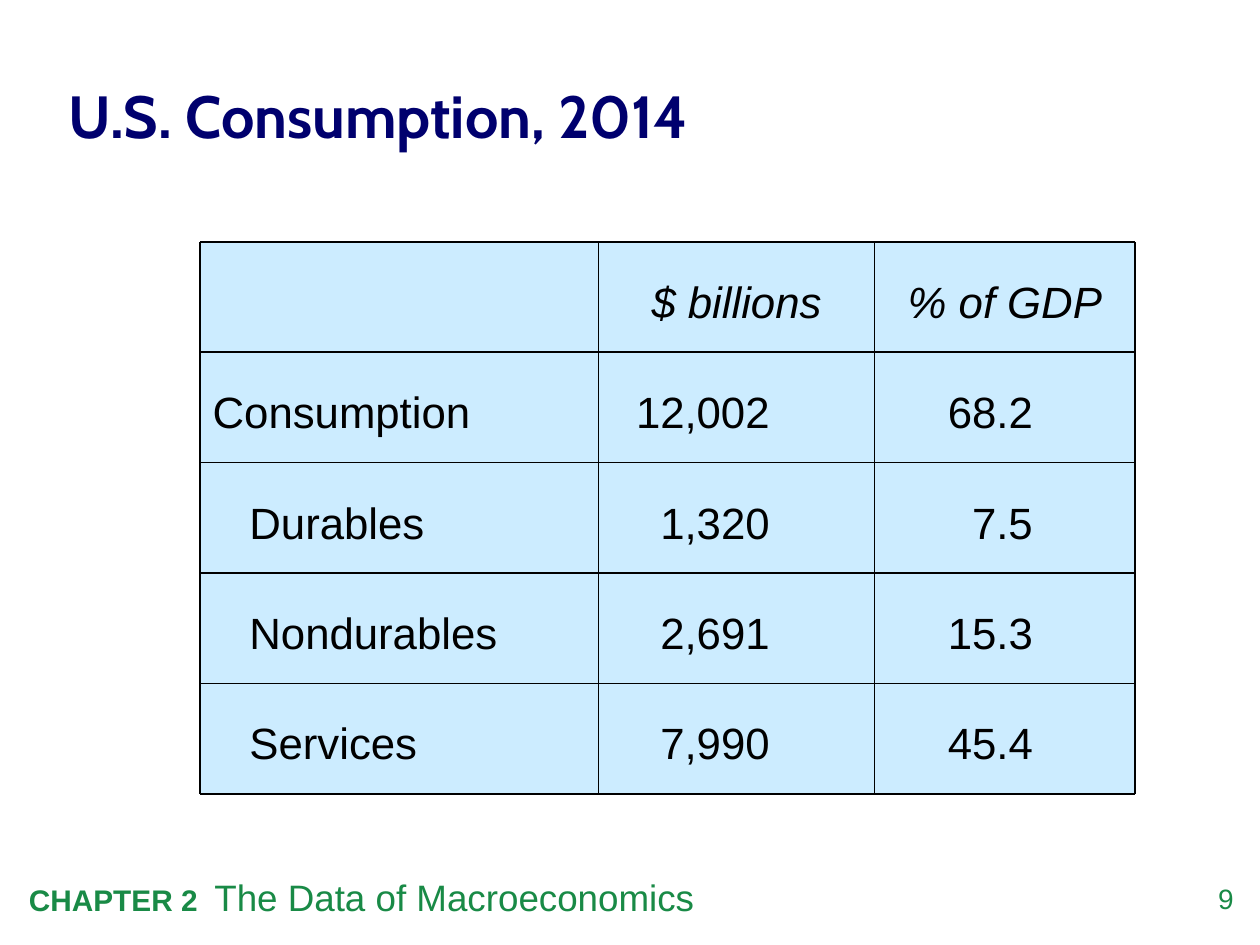
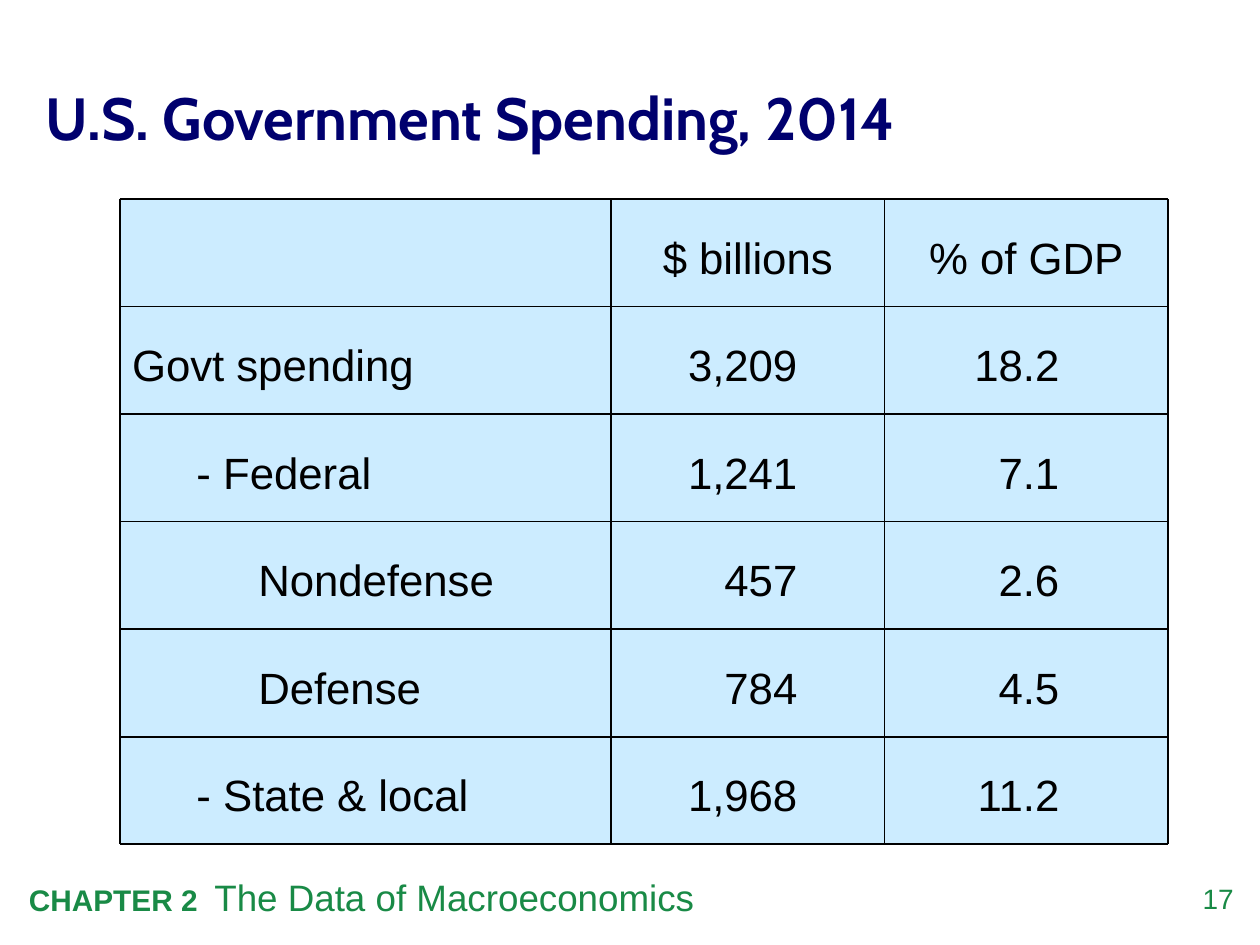
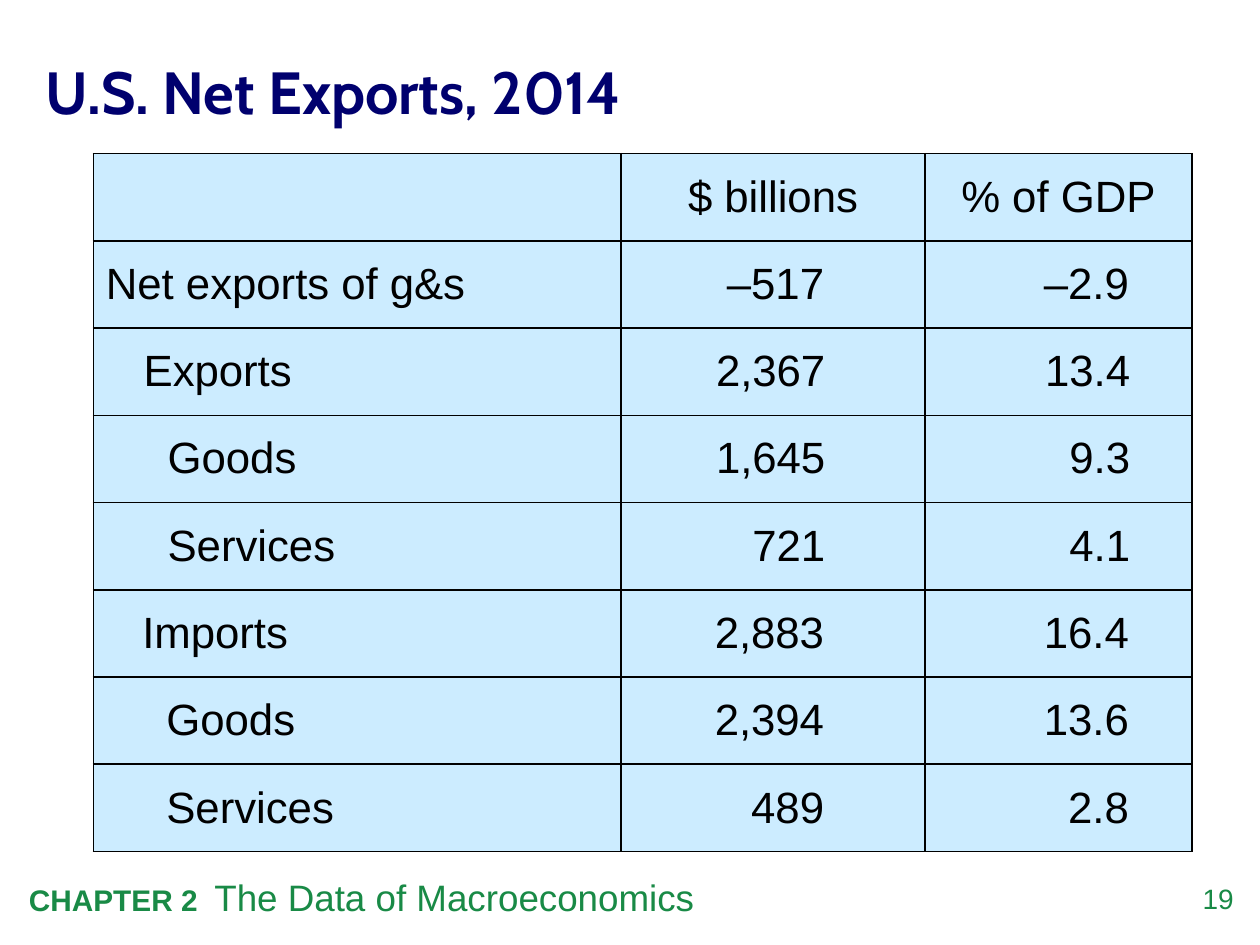
from pptx import Presentation
from pptx.dml.color import RGBColor
from pptx.enum.shapes import MSO_CONNECTOR, MSO_SHAPE
from pptx.enum.text import MSO_ANCHOR, MSO_AUTO_SIZE, PP_ALIGN
from pptx.oxml.ns import qn
from pptx.util import Inches, Pt
from lxml import etree
from itertools import accumulate

LEFT, MID, RIGHT = PP_ALIGN.LEFT, PP_ALIGN.CENTER, PP_ALIGN.RIGHT
CENTER = MSO_ANCHOR.MIDDLE
FIXED = MSO_AUTO_SIZE.NONE
RECT = MSO_SHAPE.RECTANGLE
LINE = MSO_CONNECTOR.STRAIGHT

COLORS = {"title": "00006E", "foot": "198A46", "cell": "CCECFF", "ink": "000000"}
BODY, HEAD = "Arial", "Cabin"
PAD = 0.1
HEADS = ("", "$ billions", "% of GDP")
BLANK = ("", 0, "", "")

USE = [
    ("Consumption", 0, "12,002", "68.2"),
    ("Durables", 1, "1,320", "7.5"),
    ("Nondurables", 1, "2,691", "15.3"),
    ("Services", 1, "7,990", "45.4"),
]
SPEND = [
    ("Govt spending", 0, "3,209", "18.2"),
    ("- Federal", 1, "1,241", "7.1"),
    ("Nondefense", 2, "457", "2.6"),
    ("Defense", 2, "784", "4.5"),
    ("- State & local", 1, "1,968", "11.2"),
]
NET = [("Net exports of g&s", 0, "–517", "–2.9")]
SALES = [
    ("Exports", 1, "2,367", "13.4"),
    ("Goods", 2, "1,645", "9.3"),
    ("Services", 2, "721", "4.1"),
]
BUYS = [
    ("Imports", 1, "2,883", "16.4"),
    ("Goods", 2, "2,394", "13.6"),
    ("Services", 2, "489", "2.8"),
]
WIDTHS = (4.19, 2.41, 2.12)
STEPS = (0, 0.29, 0.48)
GAPS = (0.8, 0.5)


def rgb(name):
    return RGBColor.from_string(COLORS[name])


def style(font, size, color, name=BODY, bold=False, italic=False):
    font.name, font.size = name, Pt(size)
    font.bold, font.italic = bold, italic
    font.color.rgb = rgb(color)


def strip(frame):
    frame.margin_left = frame.margin_right = 0
    frame.margin_top = frame.margin_bottom = 0


def add_title(slide, text, box):
    title = slide.shapes.title
    title.left, title.top, title.width, title.height = map(Inches, box)
    frame = title.text_frame
    frame.text = text
    frame.auto_size = FIXED
    frame.vertical_anchor = CENTER
    strip(frame)
    para = frame.paragraphs[0]
    para.alignment = LEFT
    para.line_spacing = 1.05
    style(para.font, 34, "title", HEAD, bold=True)


def add_box(slide, *box):
    frame = slide.shapes.add_textbox(*map(Inches, box)).text_frame
    frame.word_wrap = True
    return frame


def add_footer(slide, number):
    para = add_box(slide, 0.13, 6.89, 8.18, 0.45).paragraphs[0]
    for text, size, bold in (("CHAPTER 2  ", 17, True),
                             ("The Data of Macroeconomics", 21, False)):
        run = para.add_run()
        run.text = text
        style(run.font, size, "foot", bold=bold)
    frame = add_box(slide, 9.24, 7, 0.55, 0.32)
    strip(frame)
    para = frame.paragraphs[0]
    para.text = str(number)
    para.alignment = RIGHT
    style(para.font, 16, "foot")


def add_label(slide, text, box, align=LEFT, indent=0, stop=None, italic=False):
    frame = add_box(slide, *box)
    frame.vertical_anchor = CENTER
    frame.margin_left = Inches(PAD + indent)
    frame.margin_top = Inches(0.11)
    para = frame.paragraphs[0]
    para.text = text
    para.alignment = align
    if stop:
        tabs = etree.SubElement(para._p.get_or_add_pPr(), qn("a:tabLst"))
        etree.SubElement(tabs, qn("a:tab"), pos=str(Inches(stop)), algn="dec")
    style(para.font, 25, "ink", italic=italic)


def add_line(slide, *ends):
    line = slide.shapes.add_connector(LINE, *map(Inches, ends))
    line.line.color.rgb = rgb("ink")
    line.line.width = Pt(1)
    etree.SubElement(line._element.spPr, qn("a:effectLst"))
    return line


def add_sheet(slide, rows, place, widths, height, indents, stops, italic=False):
    left, top = place
    count = len(rows) + 1
    step = height / count
    edges = list(accumulate(widths, initial=left))
    right, bottom = edges[-1], top + height
    panel = slide.shapes.add_shape(
        RECT, *map(Inches, (left, top, right - left, height)))
    panel.shadow.inherit = False
    panel.fill.solid()
    panel.fill.fore_color.rgb = rgb("cell")
    panel.line.fill.background()

    for col in (1, 2):
        add_label(slide, HEADS[col], (edges[col], top, widths[col], step),
                  MID, italic=italic)
    for row, (label, level, *values) in enumerate(rows, 1):
        y = top + row * step
        add_label(slide, label, (left, y, widths[0], step), indent=indents[level])
        for col, (value, stop) in enumerate(zip(values, stops), 1):
            add_label(slide, "\t" + value, (edges[col], y, widths[col], step),
                      stop=stop)

    for row in range(count + 1):
        y = top + row * step
        line = add_line(slide, left, y, right, y)
        if row * 2 == count:
            line.begin_connect(panel, 1)
            line.end_connect(panel, 3)
    for x in edges:
        add_line(slide, x, top, x, bottom)


def add_border(cell, shown):
    props = cell._tc.get_or_add_tcPr()
    for side in ("lnL", "lnR", "lnT", "lnB"):
        line = etree.SubElement(props, qn("a:" + side), w=str(Pt(1)))
        if shown:
            fill = etree.SubElement(line, qn("a:solidFill"))
            etree.SubElement(fill, qn("a:srgbClr"), val=COLORS["ink"])
        else:
            etree.SubElement(line, qn("a:noFill"))


def fill_cell(cell, text, align, solid, left=PAD, right=PAD):
    add_border(cell, solid)
    if solid:
        cell.fill.solid()
        cell.fill.fore_color.rgb = rgb("cell")
    else:
        cell.fill.background()
    cell.vertical_anchor = CENTER
    cell.margin_left, cell.margin_right = Inches(left), Inches(right)
    para = cell.text_frame.paragraphs[0]
    if text:
        para.text = text
    para.alignment = align
    style(para.font, 25, "ink")


def add_grid(slide, rows, place, height, heads=()):
    first = 1 if heads else 0
    count = len(rows) + first
    x, y = place
    grid = slide.shapes.add_table(count, len(WIDTHS), Inches(x), Inches(y),
                                  Inches(sum(WIDTHS)), Inches(height)).table
    grid.first_row = grid.horz_banding = False
    for col, width in zip(grid.columns, WIDTHS):
        col.width = Inches(width)
    for row in grid.rows:
        row.height = Inches(height / count)
    solid = bool(heads)
    for col, text in enumerate(heads):
        fill_cell(grid.cell(0, col), text, MID, solid)
    for row, (label, level, *values) in enumerate(rows, first):
        fill_cell(grid.cell(row, 0), label, LEFT, solid, left=PAD + STEPS[level])
        for col, (value, gap) in enumerate(zip(values, GAPS), 1):
            fill_cell(grid.cell(row, col), value, RIGHT, solid, right=gap)


def add_page(deck, number, title, box):
    slide = deck.slides.add_slide(deck.slide_layouts[5])
    add_title(slide, title, box)
    add_footer(slide, number)
    return slide


def main():
    deck = Presentation()
    deck.slide_width, deck.slide_height = Inches(10), Inches(7.5)

    slide = add_page(deck, 9, "U.S. Consumption, 2014", (0.54, 0.24, 9, 1.31))
    add_sheet(slide, USE, (1.59, 1.92), (3.16, 2.19, 2.07), 4.38,
              (0, 0.29), (1.26, 0.87), italic=True)

    slide = add_page(deck, 17, "U.S. Government Spending, 2014",
                     (0.36, 0.26, 9.18, 1.31))
    add_sheet(slide, SPEND, (0.95, 1.58), (3.9, 2.17, 2.25), 5.12,
              (0, 0.51, 1), (1.38, 1))

    slide = add_page(deck, 19, "U.S. Net Exports, 2014", (0.36, 0.33, 9.18, 0.76))
    add_grid(slide, NET + [BLANK] * 6, (0.74, 1.22), 5.54, HEADS)
    add_grid(slide, SALES, (0.75, 2.6), 2.08)
    add_grid(slide, BUYS, (0.74, 4.68), 2.08)

    deck.save("out.pptx")


if __name__ == "__main__":
    main()
